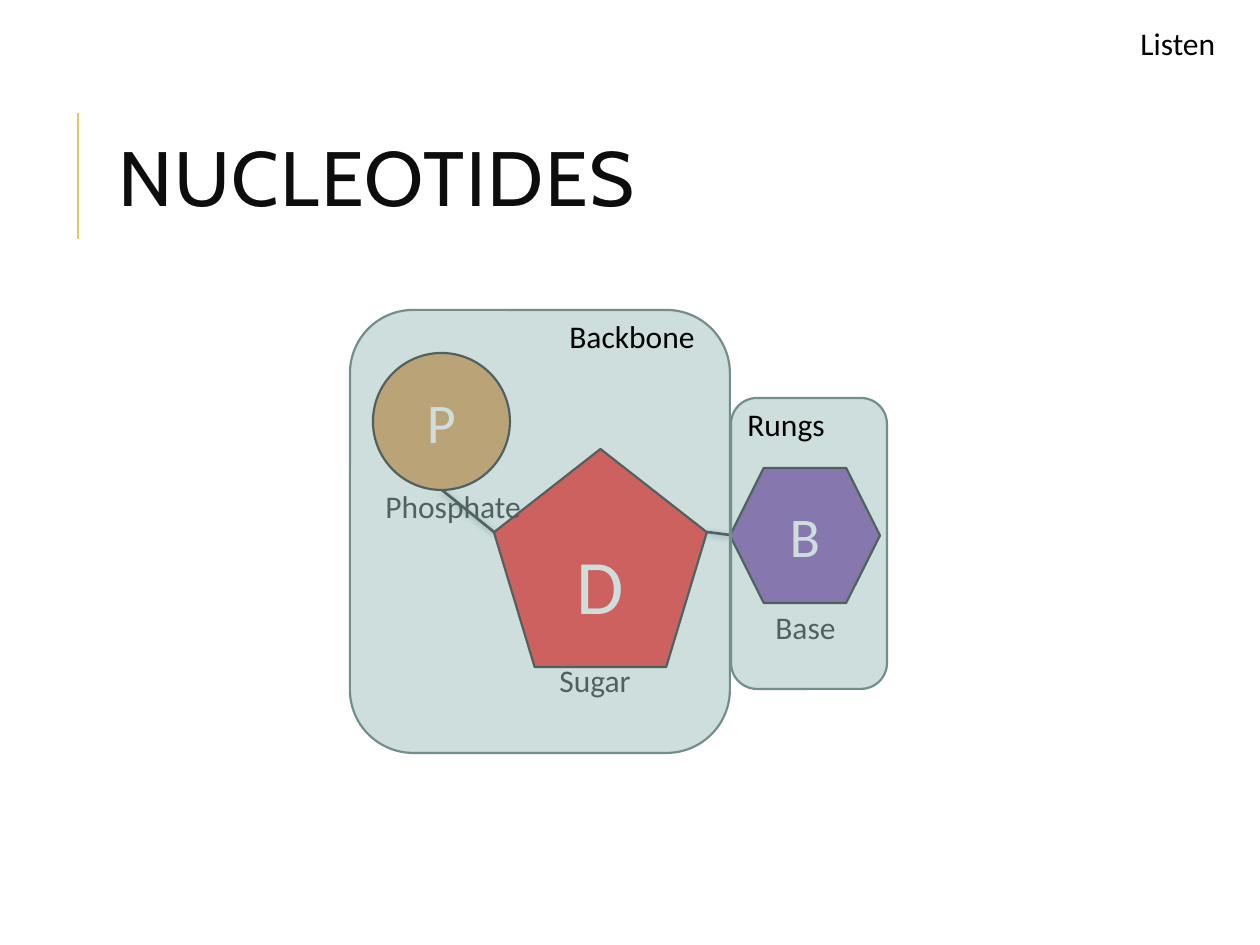
from lxml import etree
from pptx import Presentation
from pptx import util as u
from pptx.dml.color import RGBColor
from pptx.enum import shapes, text
from pptx.oxml import parse_xml
from pptx.oxml.ns import nsdecls, qn

PX = 9144000 // 1260  # 126 px to the inch, rounded to whole EMU
C = {"black": "000000", "white": "FFFFFF", "title": "0D0D0D", "rule": "E3CC5A",
     "sugar": "FF0000", "base": "7030A0", "phosphate": "DB8631",
     "panel": "9DBFBE", "panel_line": "748D8D"}
SHADOW = ('<a:effectLst %s><a:outerShdw blurRad="50800" dist="12700" dir="5400000" rotWithShape="0">'
          '<a:srgbClr val="000000"><a:alpha val="50000"/></a:srgbClr></a:outerShdw></a:effectLst>'
          % nsdecls("a"))

prs = Presentation()
prs.slide_width, prs.slide_height = u.Inches(10), u.Inches(7.5)
s = prs.slides.add_slide(prs.slide_layouts[6])


def write(sp, words, size=18, color="black", font="Calibri", center=False, middle=False, spacing=None):
    tf = sp.text_frame
    tf.word_wrap = True
    tf.vertical_anchor = text.MSO_ANCHOR.MIDDLE if middle else text.MSO_ANCHOR.TOP
    p = tf.paragraphs[0]
    p.alignment = text.PP_ALIGN.CENTER if center else text.PP_ALIGN.LEFT
    p.line_spacing = spacing
    r = p.add_run()
    r.text = words
    r.font.size, r.font.name = u.Pt(size), font
    r.font.color.rgb = RGBColor.from_string(C[color])
    return r


def add_shape(kind, box, fill, line):
    sp = s.shapes.add_shape(kind, *[v * PX for v in box])
    sp.shadow.inherit = False
    sp.fill.solid()
    sp.fill.fore_color.rgb = RGBColor.from_string(C[fill])
    sp.line.color.rgb = RGBColor.from_string(C[line])
    sp.line.width = u.Pt(1.25)
    return sp


# Title rule and the bonds between the parts
for x1, y1, x2, y2, color in [(78, 239, 78, 113, "rule"),
                              (442, 490, 494, 532, "black"),
                              (707, 532, 730, 535, "black")]:
    cx = s.shapes.add_connector(shapes.MSO_CONNECTOR.STRAIGHT, *[v * PX for v in (x1, y1, x2, y2)])
    cx.line.color.rgb = RGBColor.from_string(C[color])
    cx.line.width = u.Pt(1.5)
    cx._element.spPr.append(parse_xml(SHADOW) if color == "black"
                            else parse_xml("<a:effectLst %s/>" % nsdecls("a")))

# Title
title = s.shapes.add_textbox(*[v * PX for v in (106, 81, 1004, 207)])
r = write(title, "NUCLEOTIDES", size=44, color="title", font="Cabin", middle=True, spacing=0.8)
r.font._element.set("spc", "100")

# Sugar, base and phosphate
kinds = shapes.MSO_SHAPE
for kind, box, fill, letter, size in [
        (kinds.REGULAR_PENTAGON, (494, 449, 213, 218), "sugar", "D", 44),
        (kinds.HEXAGON, (730, 468, 150, 135), "base", "B", 32),
        (kinds.OVAL, (373, 353, 137, 137), "phosphate", "P", 32)]:
    write(add_shape(kind, box, fill, "black"), letter, size=size, color="white", center=True, middle=True)

# Labels: those under the panels come first, those over them last
labels = [("Listen", 1128, 18, 120), ("Sugar", 547, 655, 212), ("Base", 763, 602, 89),
          ("Phosphate", 373, 481, 212), ("Backbone", 557, 311, 159), ("Rungs", 735, 399, 159)]
panels = [(350, 310, 380, 443), (731, 398, 156, 291)]
for i, (words, x, y, w) in enumerate(labels):
    if i >= 4:
        # Half-transparent panel behind its heading
        sp = add_shape(kinds.ROUNDED_RECTANGLE, panels[i - 4], "panel", "panel_line")
        clr = sp._element.spPr.find(qn("a:solidFill"))[0]
        etree.SubElement(clr, qn("a:alpha")).set("val", "51000")
    write(s.shapes.add_textbox(x * PX, y * PX, w * PX, 50 * PX), words)

prs.save("out.pptx")
